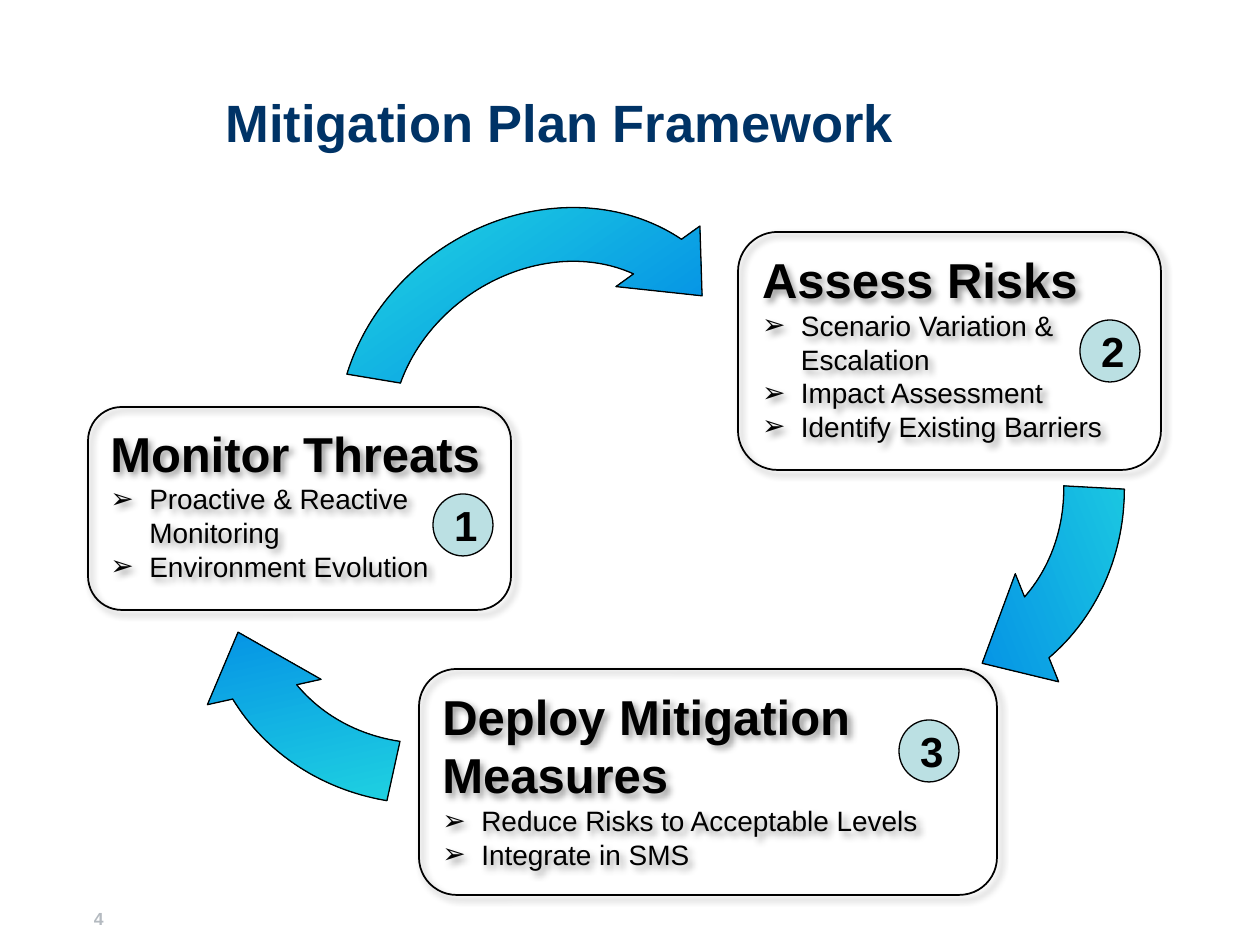
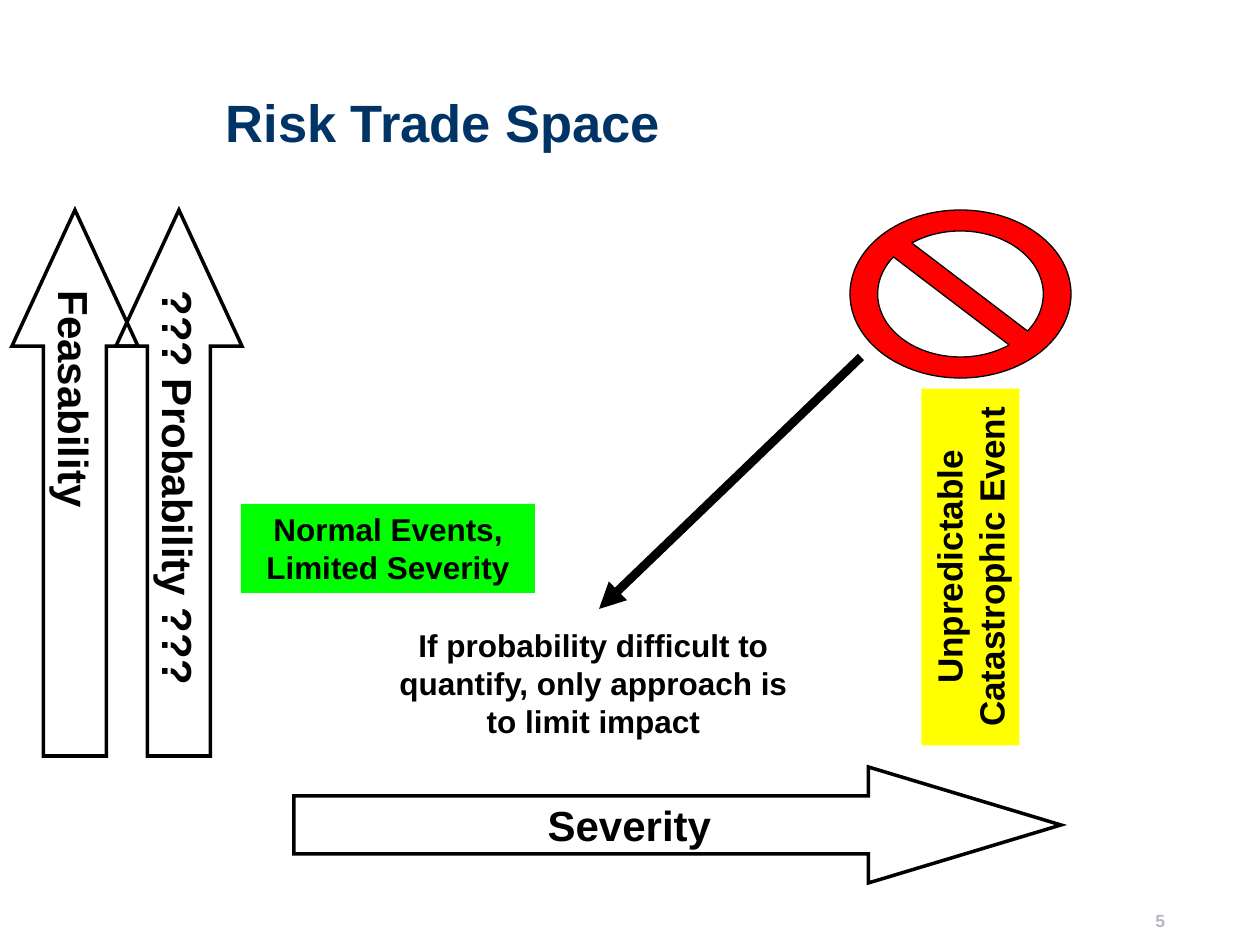
from math import cos, radians, sin, tan

from lxml.etree import SubElement
from pptx import Presentation
from pptx.dml.color import RGBColor
from pptx.enum.shapes import MSO_CONNECTOR, MSO_SHAPE
from pptx.enum.text import MSO_ANCHOR as ANCHOR, MSO_AUTO_SIZE, PP_ALIGN as ALIGN
from pptx.oxml.ns import qn
from pptx.util import Pt

FONT = "Arial"
COLORS = {
    "navy": "003366", "black": "000000", "grey": "B4BAC0", "badge": "BBE0E3",
    "green": "00FF00", "yellow": "FFFF00", "red": "FF0000",
}
ARROW_STOPS = ((0, "03D4A8"), (19, "21D6E0"), (57, "0087E6"), (100, "005CBF"))
BULLET_INDENT = 39


def px(length):
    """Turn a length in px (126 to the inch) into EMU."""
    return round(length * 914400 / 126)


def color(name):
    """Look up a named colour."""
    return RGBColor.from_string(COLORS[name])


def xml(parent, tag, **attributes):
    """Append a DrawingML element to its parent."""
    return SubElement(parent, qn(f"a:{tag}"), {key: str(value) for key, value in attributes.items()})


def add_text(shape, paragraphs, size=18, bold=True, ink="black", align=ALIGN.LEFT,
             anchor=ANCHOR.TOP, wrap=True, bullet_size=None):
    """Write paragraphs; with bullet_size, those after the first are plain bullets."""
    frame = shape.text_frame
    frame.auto_size = MSO_AUTO_SIZE.NONE
    frame.word_wrap = wrap
    frame.vertical_anchor = anchor
    for index, text in enumerate(paragraphs):
        paragraph = frame.add_paragraph() if index else frame.paragraphs[0]
        paragraph.alignment = align
        bulleted = bool(bullet_size and index)
        if bulleted:
            properties = paragraph._p.get_or_add_pPr()
            properties.set("marL", str(px(BULLET_INDENT)))
            properties.set("indent", str(-px(BULLET_INDENT)))
            xml(properties, "buFont", typeface=FONT)
            xml(properties, "buChar", char="➢")
        run = paragraph.add_run()
        run.text = text
        run.font.name = FONT
        run.font.size = Pt(bullet_size if bulleted else size)
        run.font.bold = bold and not bulleted
        run.font.color.rgb = color(ink)
    return frame


def style_shape(shape, fill=None, line=None):
    """Set fill and black line width, either of them optional, without shadow."""
    if fill:
        shape.fill.solid()
        shape.fill.fore_color.rgb = color(fill)
    else:
        shape.fill.background()
    if line:
        shape.line.color.rgb = color("black")
        shape.line.width = Pt(line)
    else:
        shape.line.fill.background()
    shape.shadow.inherit = False


def add_shape(slide, kind, box, fill=None, line=None, rotation=0, adjustments=()):
    """Add a styled preset shape."""
    shape = slide.shapes.add_shape(kind, *map(px, box))
    style_shape(shape, fill, line)
    shape.rotation = rotation
    for index, value in enumerate(adjustments):
        shape.adjustments[index] = value
    return shape


def add_slide(presentation, title, number, number_box, number_align):
    """Add a slide with its title and page number."""
    slide = presentation.slides.add_slide(presentation.slide_layouts[5])
    heading = slide.shapes.title
    heading.left, heading.top, heading.width, heading.height = map(px, (213, 84, 953, 158))
    add_text(heading, [title], size=30, ink="navy")
    footer = slide.shapes.add_textbox(*map(px, number_box))
    frame = add_text(footer, [number], size=10, ink="grey", align=number_align, anchor=ANCHOR.BOTTOM)
    if number_align == ALIGN.LEFT:
        frame.margin_left = 0
    else:
        frame.margin_right = 0
    return slide


def add_step(slide, box, number, badge_offset, heading, bullets):
    """Add a shadowed step card with its numbered badge."""
    card = add_shape(slide, MSO_SHAPE.ROUNDED_RECTANGLE, box, line=1)
    effects = card._element.spPr.find(qn("a:effectLst"))
    shadow = xml(effects, "outerShdw", blurRad=Pt(4), dist=Pt(3), dir=45 * 60000, algn="tl", rotWithShape=0)
    xml(xml(shadow, "srgbClr", val=COLORS["black"]), "alpha", val=40000)
    add_text(card, [heading, *bullets], size=28, bullet_size=16)
    badge_box = (box[0] + badge_offset[0], box[1] + badge_offset[1], 60, 62)
    badge = add_shape(slide, MSO_SHAPE.OVAL, badge_box, fill="badge", line=0.75)
    add_text(badge, [number], size=24, align=ALIGN.CENTER, anchor=ANCHOR.MIDDLE)


def add_cycle_arrow(slide, box, rotation, head_angle, tail_angle):
    """Add a curved arrow with the four-stop gradient."""
    arrow = add_shape(slide, MSO_SHAPE.CIRCULAR_ARROW, box, line=0.75, rotation=rotation,
                      adjustments=(0.125, head_angle, 204.58, tail_angle, 0.12))
    arrow.fill.gradient()
    gradient = arrow._element.spPr.find(qn("a:gradFill"))
    for child in list(gradient):
        gradient.remove(child)
    stops = xml(gradient, "gsLst")
    for position, stop in ARROW_STOPS:
        xml(xml(stops, "gs", pos=position * 1000), "srgbClr", val=stop)
    xml(gradient, "lin", ang=90 * 60000, scaled=1)


def add_axis_arrow(slide, kind, box, label, head, vertical=False):
    """Add a sharp-cornered block arrow that carries an axis label."""
    arrow = add_shape(slide, kind, box, line=2, adjustments=(0.5, head))
    xml(arrow.line._get_or_add_ln(), "miter", lim=800000)
    frame = add_text(arrow, [label], size=24, align=ALIGN.CENTER, anchor=ANCHOR.MIDDLE, wrap=False)
    if vertical:
        frame._txBody.bodyPr.set("vert", "eaVert")


def add_event(slide, box, label, fill, size, rotation=0):
    """Add a filled event label."""
    event = add_shape(slide, MSO_SHAPE.RECTANGLE, box, fill=fill, rotation=rotation)
    add_text(event, [label], size=size, align=ALIGN.CENTER)


def arc_points(box, radius, start, sweep, pieces):
    """Return the start of an elliptical arc, then three curve points for each piece."""
    left, top, width, height = box
    step = radians(sweep / pieces)
    pull = 4 / 3 * tan(step / 4)
    unit = [(cos(radians(start)), sin(radians(start)))]
    for piece in range(pieces):
        first = radians(start) + piece * step
        last = first + step
        unit += [(cos(first) - pull * sin(first), sin(first) + pull * cos(first)),
                 (cos(last) + pull * sin(last), sin(last) - pull * cos(last)),
                 (cos(last), sin(last))]
    return [(px(left + width / 2 * (1 + radius * x)), px(top + height / 2 * (1 + radius * y)))
            for x, y in unit]


def curve_outline(shape):
    """Turn each three line segments of a freeform into one cubic curve."""
    segments = list(shape._element.spPr.iter(qn("a:lnTo")))
    for index in range(0, len(segments), 3):
        first = segments[index]
        curve = first.makeelement(qn("a:cubicBezTo"), {})
        first.addprevious(curve)
        for segment in segments[index:index + 3]:
            curve.append(segment[0])
            segment.getparent().remove(segment)


def add_prohibition_sign(slide, box):
    """Add an oval ring with a diagonal bar, as one outline with two openings."""
    outer = arc_points(box, 1, 180, 360, 4)
    builder = slide.shapes.build_freeform(*outer[0])
    builder.add_line_segments(outer[1:], close=True)
    for start in (-126, 54):
        opening = arc_points(box, 0.75, start, 162, 2)
        builder.move_to(*opening[0])
        builder.add_line_segments(opening[1:], close=True)
    sign = builder.convert_to_shape()
    curve_outline(sign)
    style_shape(sign, fill="red", line=0.75)


def add_impact_arrow(slide, start, end):
    """Add the thick line with an arrowhead at its end."""
    arrow = slide.shapes.add_connector(MSO_CONNECTOR.STRAIGHT, *map(px, (*start, *end)))
    arrow.line.color.rgb = color("black")
    arrow.line.width = Pt(5)
    xml(arrow.line._get_or_add_ln(), "tailEnd", type="triangle")
    xml(arrow._element.spPr, "effectLst")


def build_framework(presentation):
    """Build the three-step cycle slide."""
    slide = add_slide(presentation, "Mitigation Plan Framework", "4", (94, 872, 566, 63), ALIGN.LEFT)
    add_step(slide, (88, 407, 423, 203), "1", (345, 87), "Monitor Threats",
             ["Proactive & Reactive Monitoring", "Environment Evolution"])
    add_step(slide, (738, 232, 423, 238), "2", (342, 88), "Assess Risks",
             ["Scenario Variation & Escalation", "Impact Assessment", "Identify Existing Barriers"])
    add_step(slide, (419, 669, 578, 226), "3", (480, 51), "Deploy Mitigation Measures",
             ["Reduce Risks to Acceptable Levels", "Integrate in SMS"])
    add_cycle_arrow(slide, (305, 192, 485, 431), 325.2, 10.8, 134.53)
    for box, rotation in (((649, 235, 517, 485), 68.3), ((175, 346, 517, 485), 167.6)):
        add_cycle_arrow(slide, box, rotation, 11.31, 176.87)


def build_trade_space(presentation):
    """Build the probability and severity slide."""
    slide = add_slide(presentation, "Risk Trade Space", "5", (903, 874, 262, 63), ALIGN.RIGHT)
    add_axis_arrow(slide, MSO_SHAPE.UP_ARROW, (116, 210, 126, 546), "??? Probability ???", 1.08, vertical=True)
    add_axis_arrow(slide, MSO_SHAPE.RIGHT_ARROW, (294, 767, 767, 116), "Severity", 1.66)
    add_event(slide, (241, 504, 294, 89), "Normal Events, Limited Severity", "green", 18)
    add_event(slide, (792, 518, 357, 98), "Unpredictable Catastrophic Event", "yellow", 20, rotation=270)
    add_prohibition_sign(slide, (850, 210, 221, 168))
    add_impact_arrow(slide, (861, 357), (599, 609))
    advice = slide.shapes.add_textbox(*map(px, (378, 620, 431, 127)))
    add_text(advice, ["If probability difficult to quantify, only approach is to limit impact"],
             align=ALIGN.CENTER)
    add_axis_arrow(slide, MSO_SHAPE.UP_ARROW, (12, 210, 126, 546), "Feasability", 1.08, vertical=True)


def main():
    """Build and save the presentation."""
    presentation = Presentation()
    presentation.slide_width, presentation.slide_height = px(1260), px(945)
    build_framework(presentation)
    build_trade_space(presentation)
    presentation.save("out.pptx")


if __name__ == "__main__":
    main()
